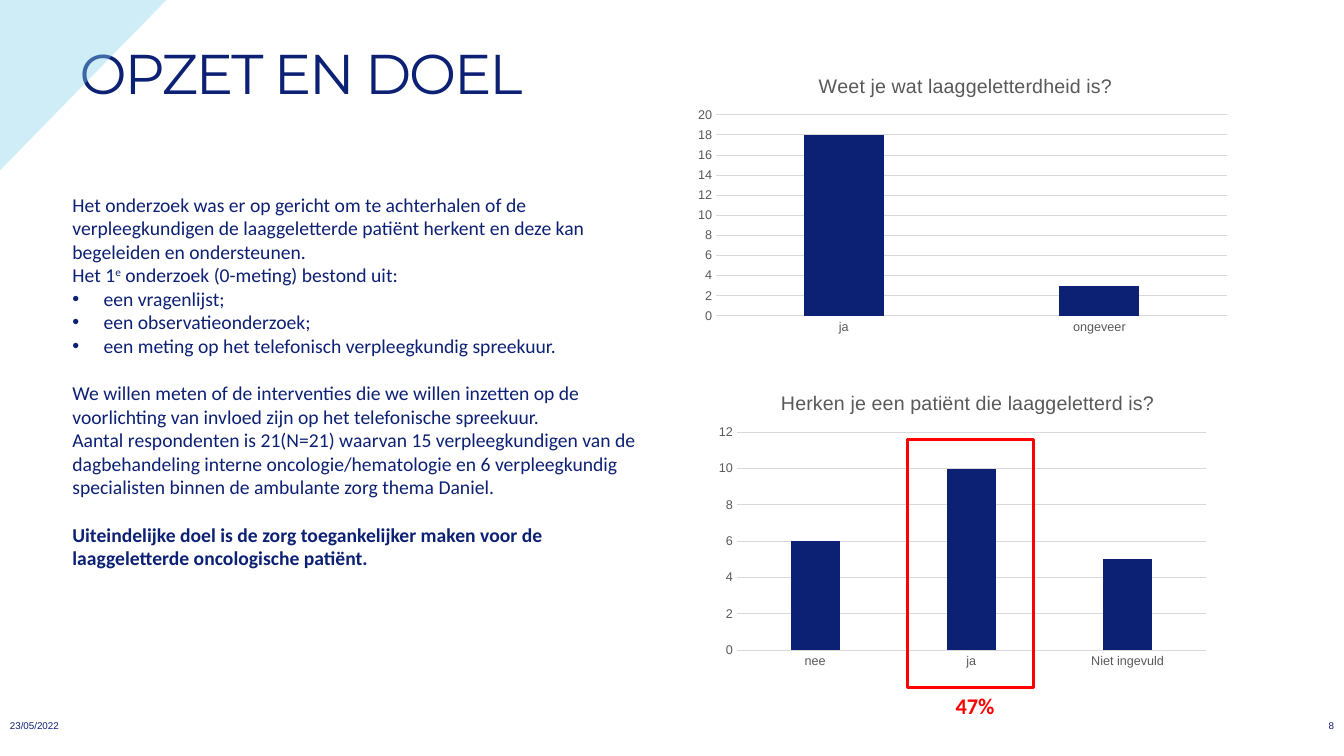
import dataclasses

import lxml.etree
import pptx
import pptx.chart.data
import pptx.dml.color
import pptx.enum.chart
import pptx.enum.shapes
import pptx.enum.text
import pptx.oxml
import pptx.oxml.ns
import pptx.util

qn = pptx.oxml.ns.qn
Pt = pptx.util.Pt
ALIGN = pptx.enum.text.PP_ALIGN


@dataclasses.dataclass(frozen=True)
class Theme:
    """Colours, fonts and type sizes of the slide."""
    navy: str = "0C2074"
    sky: str = "86D2ED"
    red: str = "FF0000"
    grey: str = "595959"
    grid: str = "D9D9D9"
    heading_font: str = "Montserrat"
    body_font: str = "Calibri"
    chart_font: str = "Arial"
    heading: int = 40
    body: int = 14
    callout: int = 16
    axis: int = 9
    footer: int = 7


@dataclasses.dataclass(frozen=True)
class Box:
    """A rectangle in inches."""
    left: float
    top: float
    width: float
    height: float

    def inner(self, left, top, width, height):
        """Return the inner box given in percentages of this one."""
        return Box(self.left + self.width * left / 100, self.top + self.height * top / 100,
                   self.width * width / 100, self.height * height / 100)

    def frame(self):
        """Return the position and size as lengths."""
        return [pptx.util.Inches(value) for value in dataclasses.astuple(self)]


THEME = Theme()
PAGE = Box(0, 0, 13.33, 7.5)


def rgb(value):
    """Turn a hex string into a colour."""
    return pptx.dml.color.RGBColor.from_string(value)


def style(font, name, size, colour, bold=False):
    """Set the face, size, colour and weight of a font."""
    font.name, font.size, font.bold = name, Pt(size), bold
    font.color.rgb = rgb(colour)


def add_corner(page, box):
    """Draw the translucent triangle in the top left corner."""
    corner = page.shapes.add_shape(pptx.enum.shapes.MSO_SHAPE.RIGHT_TRIANGLE, *box.frame())
    corner.rotation = 90
    corner.shadow.inherit = False
    corner.fill.solid()
    corner.fill.fore_color.rgb = rgb(THEME.sky)
    corner.line.fill.background()
    colour = corner._element.spPr.find(".//" + qn("a:srgbClr"))
    lxml.etree.SubElement(colour, qn("a:alpha"), val="40000")


def add_title(page, box, text):
    """Place and format the title placeholder."""
    title = page.shapes.title
    title.left, title.top, title.width, title.height = box.frame()
    title.text_frame.text = text
    title.text_frame.auto_size = pptx.enum.text.MSO_AUTO_SIZE.NONE
    title.text_frame.vertical_anchor = pptx.enum.text.MSO_ANCHOR.MIDDLE
    para = title.text_frame.paragraphs[0]
    para.alignment, para.line_spacing = ALIGN.LEFT, 0.9
    style(para.font, THEME.heading_font, THEME.heading, THEME.navy)
    para.runs[0]._r.get_or_add_rPr().set("spc", "-150")


def add_label(page, box, text, font, size, colour, bold=False, align=ALIGN.LEFT):
    """Add a single line of text."""
    para = page.shapes.add_textbox(*box.frame()).text_frame.paragraphs[0]
    para.text, para.alignment = text, align
    style(para.font, font, size, colour, bold)


def add_bullet(para):
    """Give a paragraph a hanging bullet."""
    props = para._p.get_or_add_pPr()
    indent = pptx.util.Inches(0.31)
    props.set("marL", str(indent))
    props.set("indent", str(-indent))
    lxml.etree.SubElement(props, qn("a:buFont"), typeface="Arial")
    lxml.etree.SubElement(props, qn("a:buChar"), char="•")


def add_body(page, box, paragraphs):
    """Write the text column from (kind, runs) pairs."""
    frame = page.shapes.add_textbox(*box.frame()).text_frame
    frame.word_wrap = True
    for index, (kind, runs) in enumerate(paragraphs):
        para = frame.add_paragraph() if index else frame.paragraphs[0]
        if kind == "bullet":
            add_bullet(para)
        if kind in ("section", "goal"):
            para.space_before = Pt(17)
        for position, text in enumerate(runs):
            span = para.add_run()
            span.text = text
            if position == 1:
                span._r.get_or_add_rPr().set("baseline", "30000")
        style(para.font, THEME.body_font, THEME.body, THEME.navy, kind == "goal")


def set_layout(parent, anchor, target, **shares):
    """Fix the place of a chart element as shares of the chart."""
    for old in parent.findall(qn("c:layout")):
        parent.remove(old)
    layout = pptx.oxml.parse_xml(
        '<c:layout xmlns:c="http://schemas.openxmlformats.org/drawingml/2006/chart"/>')
    manual = lxml.etree.SubElement(layout, qn("c:manualLayout"))
    if target:
        lxml.etree.SubElement(manual, qn("c:layoutTarget"), val=target)
    for name in ("x", "y"):
        lxml.etree.SubElement(manual, qn(f"c:{name}Mode"), val="edge")
    for name, share in shares.items():
        lxml.etree.SubElement(manual, qn(f"c:{name}"), val=str(share))
    parent.insert(anchor, layout)


def add_column_chart(page, box, question, answers, top_value, title_left, plot):
    """Add one question with its answers as columns."""
    data = pptx.chart.data.CategoryChartData()
    data.categories = list(answers)
    data.add_series("Series 1", list(answers.values()))
    kind = pptx.enum.chart.XL_CHART_TYPE.COLUMN_CLUSTERED
    chart = page.shapes.add_chart(kind, *box.frame(), data).chart
    chart.has_legend = False
    style(chart.font, THEME.chart_font, THEME.axis, THEME.grey)
    chart.has_title = True
    heading = chart.chart_title
    para = heading.text_frame.paragraphs[0]
    para.text = question
    style(para.font, THEME.chart_font, THEME.body, THEME.grey)
    set_layout(heading._element, 1, None, x=title_left, y=0.05)
    x, y, w, h = plot
    set_layout(chart._chartSpace.chart.plotArea, 0, "inner", x=x, y=y, w=w, h=h)

    columns = chart.plots[0]
    columns.gap_width, columns.overlap, columns.vary_by_categories = 219, -27, False
    fill = columns.series[0].format.fill
    fill.solid()
    fill.fore_color.rgb = rgb(THEME.navy)
    values = chart.value_axis
    values.minimum_scale, values.maximum_scale, values.major_unit = 0, top_value, 2
    values.format.line.fill.background()
    for axis in (chart.category_axis, values):
        axis.major_tick_mark = pptx.enum.chart.XL_TICK_MARK.NONE
        style(axis.tick_labels.font, THEME.chart_font, THEME.axis, THEME.grey)
    for line in (chart.category_axis.format.line, values.major_gridlines.format.line):
        line.color.rgb, line.width = rgb(THEME.grid), Pt(0.75)


def add_highlight(page, box, share):
    """Frame the middle column of a chart and write its share below."""
    frame = page.shapes.add_shape(pptx.enum.shapes.MSO_SHAPE.RECTANGLE,
                                  *box.inner(38.8, 22.33, 25, 82).frame())
    frame.shadow.inherit = False
    frame.fill.background()
    frame.line.color.rgb, frame.line.width = rgb(THEME.red), Pt(2.25)
    add_label(page, box.inner(46.4, 104.33, 12.6, 12.33), share,
              THEME.body_font, THEME.callout, THEME.red, True)


def build_page(deck):
    """Compose the slide."""
    page = deck.slides.add_slide(deck.slide_layouts.get_by_name("Title Only"))
    add_corner(page, PAGE.inner(-0.15, 0, 12.83, 22.27))
    add_title(page, PAGE.inner(5.18, 5.33, 83.72, 9.47), "OPZET EN DOEL")
    footer = (THEME.chart_font, THEME.footer, THEME.navy)
    add_label(page, PAGE.inner(0, 94.53, 6.83, 2.93), "23/05/2022", *footer)
    add_label(page, PAGE.inner(96.02, 94.53, 3.98, 2.93), "8", *footer, align=ALIGN.RIGHT)
    add_column_chart(page, PAGE.inner(51.24, 7.33, 40.89, 37.47), "Weet je wat laaggeletterdheid is?",
                     {"ja": 18, "ongeveer": 3}, 20, 0.23, (0.05, 0.21, 0.93, 0.71))
    recognise = PAGE.inner(52.96, 49.2, 37.51, 40)
    add_column_chart(page, recognise, "Herken je een patiënt die laaggeletterd is?",
                     {"nee": 6, "ja": 10, "Niet ingevuld": 5}, 12, 0.13, (0.05, 0.2, 0.93, 0.72))
    add_body(page, PAGE.inner(4.65, 24.8, 43.44, 54.8), [
        ("text", ["Het onderzoek was er op gericht om te achterhalen of de verpleegkundigen de "
                  "laaggeletterde patiënt herkent en deze kan begeleiden en ondersteunen."]),
        ("text", ["Het 1", "e", " onderzoek (0-meting) bestond uit:"]),
        ("bullet", ["een vragenlijst;"]),
        ("bullet", ["een observatieonderzoek;"]),
        ("bullet", ["een meting op het telefonisch verpleegkundig spreekuur."]),
        ("section", ["We willen meten of de interventies die we willen inzetten op de "
                     "voorlichting van invloed zijn op het telefonische spreekuur."]),
        ("text", ["Aantal respondenten is 21(N=21) waarvan 15 verpleegkundigen van de "
                  "dagbehandeling interne oncologie/hematologie en 6 verpleegkundig "
                  "specialisten binnen de ambulante zorg thema Daniel."]),
        ("goal", ["Uiteindelijke doel is de zorg toegankelijker maken voor de "
                  "laaggeletterde oncologische patiënt."])])
    add_highlight(page, recognise, "47%")


def main():
    """Create and save the deck."""
    deck = pptx.Presentation()
    deck.slide_width, deck.slide_height = PAGE.frame()[2:]
    build_page(deck)
    deck.save("out.pptx")


if __name__ == "__main__":
    main()
